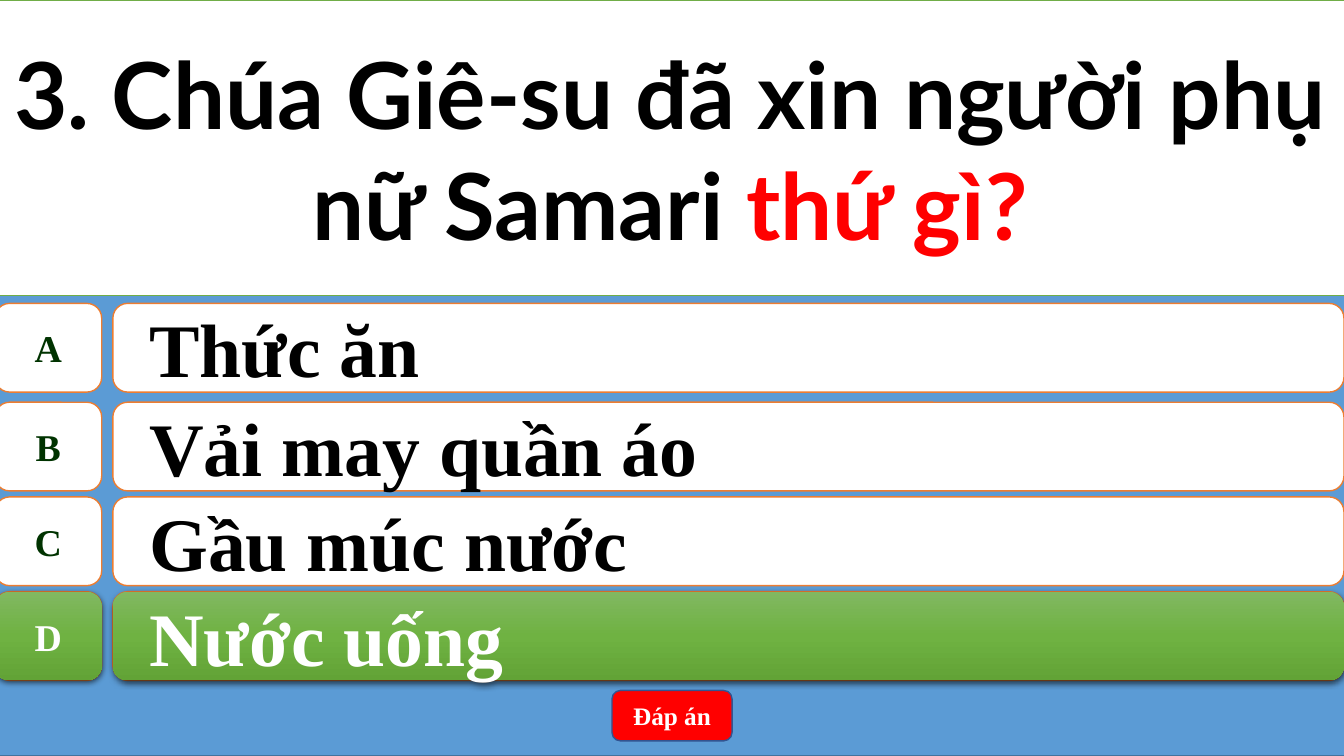
import pptx
import pptx.dml.color
import pptx.enum.shapes
import pptx.enum.text
import pptx.oxml.ns
import pptx.util
import lxml.etree

COLORS = {
    "background": "5B9BD5", "background_line": "43739E",
    "white": "FFFFFF", "black": "000000", "red": "FF0000",
    "option_line": "ED7D31", "letter": "003300",
    "question_line": "70AD47", "button_line": "325491",
    "green_top": "81B861", "green_middle": "6FB242", "green_bottom": "62A336",
}
GREEN_STOPS = ((0, "green_top"), (50, "green_middle"), (100, "green_bottom"))
OPTIONS = (
    ("A", "Thức ăn", 40.13),
    ("B", "Vải may quần áo", 53.2),
    ("C", "Gầu múc nước", 65.73),
    ("D", "Nước uống", 78.27),
)
ROW_HEIGHT = 11.73
LEFT_EDGE = -0.38
FULL_WIDTH = 100.45
SHAPES = pptx.enum.shapes.MSO_SHAPE
ALIGN = pptx.enum.text.PP_ALIGN


def color(name):
    return pptx.dml.color.RGBColor.from_string(COLORS[name])


def add_element(parent, tag, **attributes):
    values = {key: str(value) for key, value in attributes.items()}
    return lxml.etree.SubElement(parent, pptx.oxml.ns.qn(tag), values)


def add_text(paragraph, text, *, size, color_name, font="Times New Roman"):
    run = paragraph.add_run()
    run.text = text
    run.font.name = font
    run.font.size = pptx.util.Pt(size)
    run.font.bold = True
    run.font.color.rgb = color(color_name)


class QuizSlide:
    def __init__(self, presentation):
        self.width = presentation.slide_width
        self.height = presentation.slide_height
        self.slide = presentation.slides.add_slide(presentation.slide_layouts[6])

    def box(self, kind, left, top, width, height, fill=None, line=None, parent=None):
        shape = (parent or self.slide).shapes.add_shape(
            kind,
            round(left * self.width / 100), round(top * self.height / 100),
            round(width * self.width / 100), round(height * self.height / 100))
        shape.shadow.inherit = False
        if fill:
            shape.fill.solid()
            shape.fill.fore_color.rgb = color(fill)
        if line:
            shape.line.color.rgb = color(line)
            shape.line.width = pptx.util.Pt(1)
        else:
            shape.line.fill.background()
        shape.text_frame.vertical_anchor = pptx.enum.text.MSO_ANCHOR.MIDDLE
        shape.text_frame.word_wrap = True
        shape.text_frame.paragraphs[0].alignment = ALIGN.CENTER
        return shape

    def highlight(self, shape):
        shape.fill.gradient()
        shape.fill.gradient_angle = 270
        properties = shape.element.spPr
        stops = properties.find(".//" + pptx.oxml.ns.qn("a:gsLst"))
        for stop in list(stops):
            stops.remove(stop)
        for position, name in GREEN_STOPS:
            stop = add_element(stops, "a:gs", pos=position * 1000)
            add_element(stop, "a:srgbClr", val=COLORS[name])
        effects = properties.find(pptx.oxml.ns.qn("a:effectLst"))
        shadow = add_element(
            effects, "a:outerShdw", blurRad=pptx.util.Pt(4.5),
            dist=pptx.util.Pt(1.5), dir=90 * 60000, rotWithShape=0)
        shade = add_element(shadow, "a:srgbClr", val=COLORS["black"])
        add_element(shade, "a:alpha", val=63000)

    def option(self, letter, answer, top, correct=False):
        group = self.slide.shapes.add_group_shape()
        style = {"parent": group}
        if not correct:
            style.update(fill="white", line="option_line")
        letter_box = self.box(SHAPES.FLOWCHART_ALTERNATE_PROCESS,
                              LEFT_EDGE, top, 7.95, ROW_HEIGHT, **style)
        letter_box.text_frame.word_wrap = False
        add_text(letter_box.text_frame.paragraphs[0], letter, size=27,
                 color_name="white" if correct else "letter")
        answer_box = self.box(SHAPES.ROUNDED_RECTANGLE,
                              8.4, top, 91.6, ROW_HEIGHT, **style)
        paragraph = answer_box.text_frame.paragraphs[0]
        paragraph.alignment = ALIGN.LEFT
        paragraph.level = 1
        indents = paragraph._p.get_or_add_pPr()
        indents.set("marL", str(pptx.util.Inches(0.5)))
        indents.set("indent", str(pptx.util.Inches(-0.28)))
        add_text(paragraph, answer, size=54,
                 color_name="white" if correct else "black")
        if correct:
            self.highlight(letter_box)
            self.highlight(answer_box)

    def button(self, text):
        shape = self.box(SHAPES.ROUNDED_RECTANGLE, 45.54, 91.33, 8.93, 6.67,
                         "red", "button_line")
        add_text(shape.text_frame.paragraphs[0], text, size=18, color_name="white")

    def question(self, text, emphasis):
        shape = self.box(SHAPES.RECTANGLE, LEFT_EDGE, 0, FULL_WIDTH, 39.07,
                         "white", "question_line")
        for part, name in ((text, "black"), (emphasis, "red")):
            add_text(shape.text_frame.paragraphs[0], part, size=66,
                     color_name=name, font="Lato")


def main():
    presentation = pptx.Presentation()
    presentation.slide_width = pptx.util.Inches(13.33)
    presentation.slide_height = pptx.util.Inches(7.5)
    quiz = QuizSlide(presentation)
    quiz.box(SHAPES.RECTANGLE, LEFT_EDGE, 0, FULL_WIDTH, 100,
             "background", "background_line")
    for option in OPTIONS:
        quiz.option(*option)
    quiz.option(*OPTIONS[-1], correct=True)
    quiz.button("Đáp án")
    quiz.question("3. Chúa Giê-su đã xin người phụ nữ Samari ", "thứ gì?")
    presentation.save("out.pptx")


if __name__ == "__main__":
    main()
